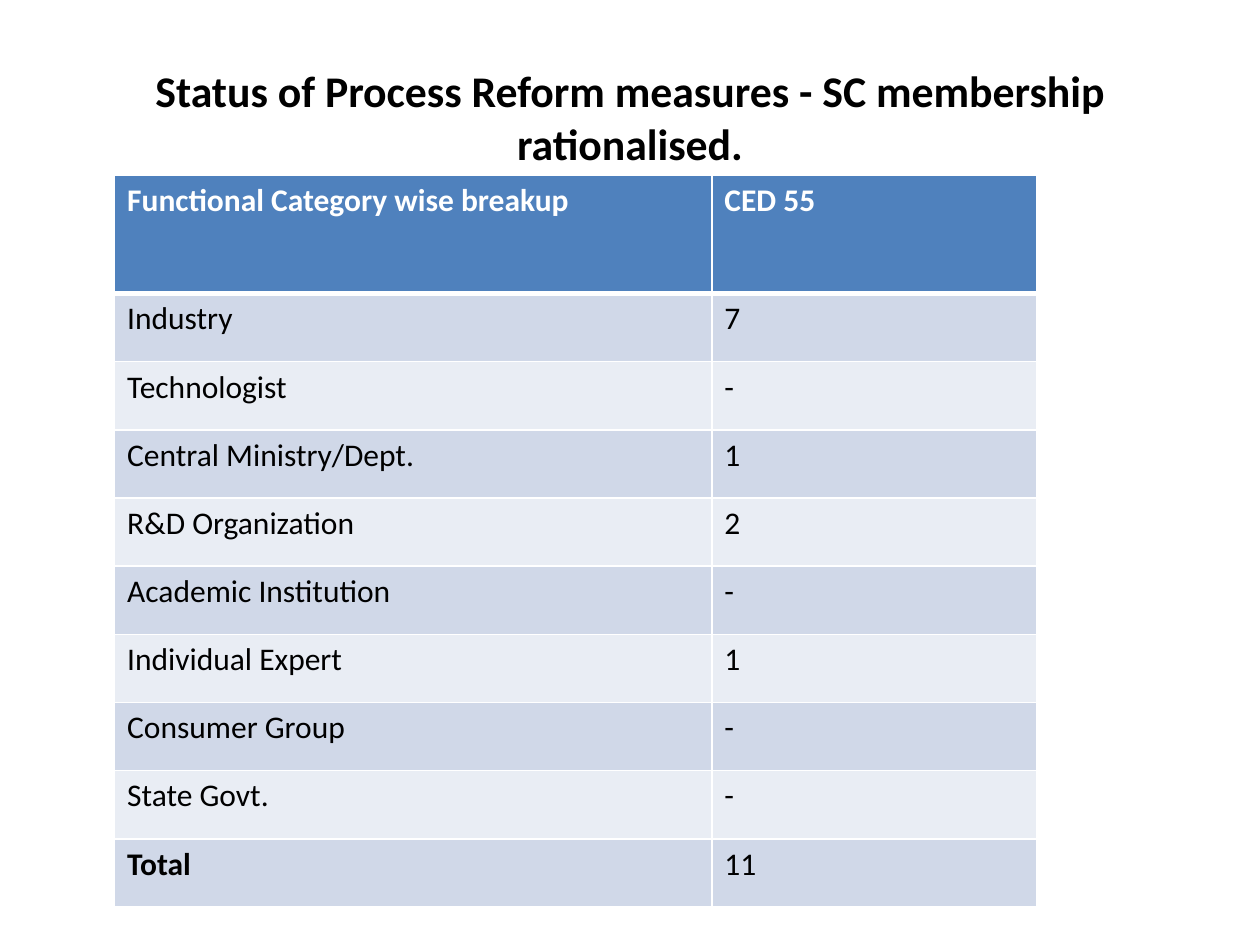
from dataclasses import dataclass

from lxml import etree
from pptx import Presentation
from pptx import util as u
from pptx.dml.color import RGBColor
from pptx.enum import text
from pptx.oxml import ns


@dataclass(frozen=True)
class Theme:
    font: str = "Calibri"
    title_size: int = 25
    table_size: int = 18
    ink: str = "000000"
    white: str = "FFFFFF"
    header: str = "4F81BD"
    bands: tuple = ("D0D8E8", "E9EDF4")
    thin: int = 1
    thick: int = 3


THEME = Theme()

TITLE = "Status of Process Reform measures - SC membership rationalised."
ROWS = [
    ("Functional Category wise breakup", "CED 55"),
    ("Industry", "7"),
    ("Technologist", "-"),
    ("Central Ministry/Dept.", "1"),
    ("R&D Organization", "2"),
    ("Academic Institution", "-"),
    ("Individual Expert", "1"),
    ("Consumer Group", "-"),
    ("State Govt.", "-"),
    ("Total", "11"),
]
COLUMN_WIDTHS = (4.74, 2.58)
HEADER_HEIGHT = 0.94


def add_span(para, words, size, color, bold):
    span = para.add_run()
    span.text = words
    span.font.name = THEME.font
    span.font.size = u.Pt(size)
    span.font.bold = bold
    span.font.color.rgb = RGBColor.from_string(color)


def set_borders(cell, widths):
    """Draw white borders; widths are points for left, right, top, bottom."""
    properties = cell._tc.get_or_add_tcPr()
    for index, (side, width) in enumerate(zip("LRTB", widths)):
        line = etree.Element(ns.qn(f"a:ln{side}"), w=str(u.Pt(width)))
        fill = etree.SubElement(line, ns.qn("a:solidFill"))
        etree.SubElement(fill, ns.qn("a:srgbClr"), val=THEME.white)
        properties.insert(index, line)  # borders come before the cell fill


def place_title(page, left, top, width, height):
    box = page.shapes.title
    box.left, box.top, box.width, box.height = map(u.Inches, (left, top, width, height))
    box.text_frame.word_wrap = True
    box.text_frame.vertical_anchor = text.MSO_ANCHOR.MIDDLE
    para = box.text_frame.paragraphs[0]
    para.alignment = text.PP_ALIGN.CENTER
    add_span(para, TITLE, THEME.title_size, THEME.ink, True)


def place_table(page, left, top, width, height):
    frame = page.shapes.add_table(
        len(ROWS), len(COLUMN_WIDTHS), *map(u.Inches, (left, top, width, height)))
    table = frame.table

    # Column widths and row heights
    for column, column_width in zip(table.columns, COLUMN_WIDTHS):
        column.width = u.Inches(column_width)
    body_height = (height - HEADER_HEIGHT) / (len(ROWS) - 1)
    for index, row in enumerate(table.rows):
        row.height = u.Inches(body_height if index else HEADER_HEIGHT)

    # Header, banded body and total
    for row_index, values in enumerate(ROWS):
        is_header = row_index == 0
        color = THEME.white if is_header else THEME.ink
        band = THEME.header if is_header else THEME.bands[(row_index - 1) % 2]
        above = THEME.thick if row_index == 1 else THEME.thin
        below = THEME.thick if is_header else THEME.thin
        for column_index, value in enumerate(values):
            cell = table.cell(row_index, column_index)
            cell.fill.solid()
            cell.fill.fore_color.rgb = RGBColor.from_string(band)
            set_borders(cell, (THEME.thin, THEME.thin, above, below))
            bold = is_header or value == "Total"
            add_span(cell.text_frame.paragraphs[0], value, THEME.table_size, color, bold)


def main():
    deck = Presentation()
    deck.slide_width, deck.slide_height = u.Inches(10), u.Inches(7.5)
    page = deck.slides.add_slide(deck.slide_layouts.get_by_name("Title Only"))
    place_title(page, 0.5, 0.3, 9, 1.25)
    place_table(page, 0.91, 1.39, sum(COLUMN_WIDTHS), 5.81)
    deck.save("out.pptx")


if __name__ == "__main__":
    main()
